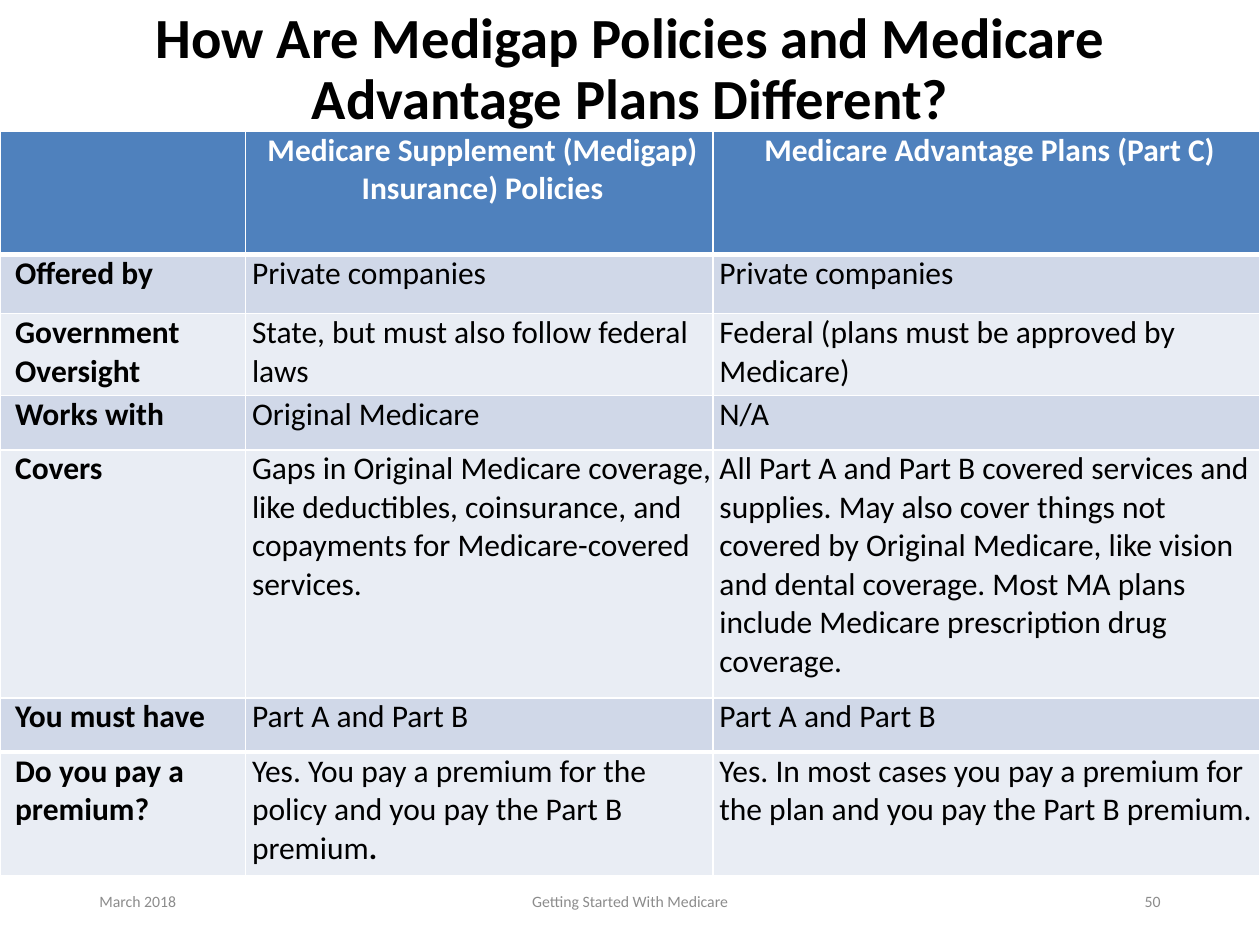
from lxml.etree import SubElement
from pptx import Presentation
from pptx.dml.color import RGBColor
from pptx.enum.text import MSO_ANCHOR, MSO_AUTO_SIZE, PP_ALIGN
from pptx.oxml.ns import qn
from pptx.util import Inches, Pt

FONT = "Calibri"
BLACK, WHITE, GRAY = "000000", "FFFFFF", "8C8C8C"
BLUE, BANDS = "4F81BD", ("E9EDF4", "D0D8E8")

COLS = (1.95, 3.71, 4.34)
ROWS = (0.98, 0.47, 0.65, 0.43, 1.97, 0.43, 0.98)
HEAVY = (1, 6)  # rows with a thick rule above them
DATA = (
    ("", "Medicare Supplement (Medigap)\vInsurance) Policies",
     "Medicare Advantage Plans (Part C)"),
    ("Offered by", "Private companies", "Private companies"),
    ("Government Oversight", "State, but must also follow federal laws",
     "Federal (plans must be approved by Medicare)"),
    ("Works with", "Original Medicare", "N/A"),
    ("Covers",
     "Gaps in Original Medicare coverage, like deductibles, coinsurance, "
     "and copayments for Medicare-covered services.",
     "All Part A and Part B covered services and supplies. May also cover "
     "things not covered by Original Medicare, like vision and dental "
     "coverage. Most MA plans include Medicare prescription drug coverage."),
    ("You must have", "Part A and Part B", "Part A and Part B"),
    ("Do you pay a premium?",
     "Yes. You pay a premium for the policy and you pay the Part B premium",
     "Yes. In most cases you pay a premium for the plan and you pay the "
     "Part B premium."),
)


def color(code):
    return RGBColor.from_string(code)


def style(par, size, code, bold=False, align=PP_ALIGN.LEFT):
    par.alignment = align
    for run in par.runs:
        font = run.font
        font.name, font.size, font.bold = FONT, Pt(size), bold
        font.color.rgb = color(code)


def place(shape, left, top, width, height):
    shape.left, shape.top = Inches(left), Inches(top)
    shape.width, shape.height = Inches(width), Inches(height)


def add_title(slide, text):
    title = slide.shapes.title
    place(title, 0.69, 0, 8.62, 1.12)
    frame = title.text_frame
    frame.text = text
    frame.word_wrap = True
    frame.auto_size = MSO_AUTO_SIZE.NONE
    frame.vertical_anchor = MSO_ANCHOR.MIDDLE
    par = frame.paragraphs[0]
    par.line_spacing = 0.9
    style(par, 32.4, BLACK, True, PP_ALIGN.CENTER)


def add_edge(cell, side, width):
    line = SubElement(cell._tc.get_or_add_tcPr(), qn("a:" + side),
                      w=str(Pt(width)))
    fill = SubElement(line, qn("a:solidFill"))
    SubElement(fill, qn("a:srgbClr"), val=WHITE)


def fill_cell(cell, text, row, col):
    head = row == 0
    # Borders come before the fill in the cell's XML
    add_edge(cell, "lnL", 1)
    add_edge(cell, "lnR", 1)
    add_edge(cell, "lnT", 3 if row in HEAVY else 1)
    add_edge(cell, "lnB", 3 if row + 1 in HEAVY else 1)
    cell.fill.solid()
    cell.fill.fore_color.rgb = color(BLUE if head else BANDS[row % 2])

    # Text with a small left indent
    cell.margin_left = cell.margin_right = 0
    cell.margin_top = cell.margin_bottom = 0
    cell.text_frame.text = text
    par = cell.text_frame.paragraphs[0]
    props = par._p.get_or_add_pPr()
    props.set("marL", str(Inches(0.05 if head or col else 0.12)))
    props.set("indent", "0")
    style(par, 18, WHITE if head else BLACK, head or col == 0,
          PP_ALIGN.CENTER if head else PP_ALIGN.LEFT)


def add_grid(slide):
    frame = slide.shapes.add_table(
        len(ROWS), len(COLS), Inches(0), Inches(1.04),
        Inches(sum(COLS)), Inches(sum(ROWS)))
    table = frame.table
    for col, width in enumerate(COLS):
        table.columns[col].width = Inches(width)
    for row, texts in enumerate(DATA):
        table.rows[row].height = Inches(ROWS[row])
        for col, text in enumerate(texts):
            fill_cell(table.cell(row, col), text, row, col)

    # The premium answer ends with a bold full stop
    par = table.cell(6, 1).text_frame.paragraphs[0]
    stop = par.add_run()
    stop.text = "."
    style(par, 18, BLACK)
    stop.font.bold = True


def add_note(slide, text, left, width, align):
    box = slide.shapes.add_textbox(
        Inches(left), Inches(6.95), Inches(width), Inches(0.4))
    frame = box.text_frame
    frame.text = text
    frame.word_wrap = True
    frame.vertical_anchor = MSO_ANCHOR.MIDDLE
    style(frame.paragraphs[0], 9, GRAY, align=align)


def main():
    deck = Presentation()
    deck.slide_width, deck.slide_height = Inches(10), Inches(7.5)
    slide = deck.slides.add_slide(deck.slide_layouts[5])

    add_title(slide, "How Are Medigap Policies and Medicare "
                     "Advantage Plans Different?")
    add_grid(slide)

    # Footer
    add_note(slide, "March 2018", 0.69, 2.25, PP_ALIGN.LEFT)
    add_note(slide, "Getting Started With Medicare", 3.31, 3.38,
             PP_ALIGN.CENTER)
    add_note(slide, "50", 7.06, 2.25, PP_ALIGN.RIGHT)

    deck.save("out.pptx")


if __name__ == "__main__":
    main()
